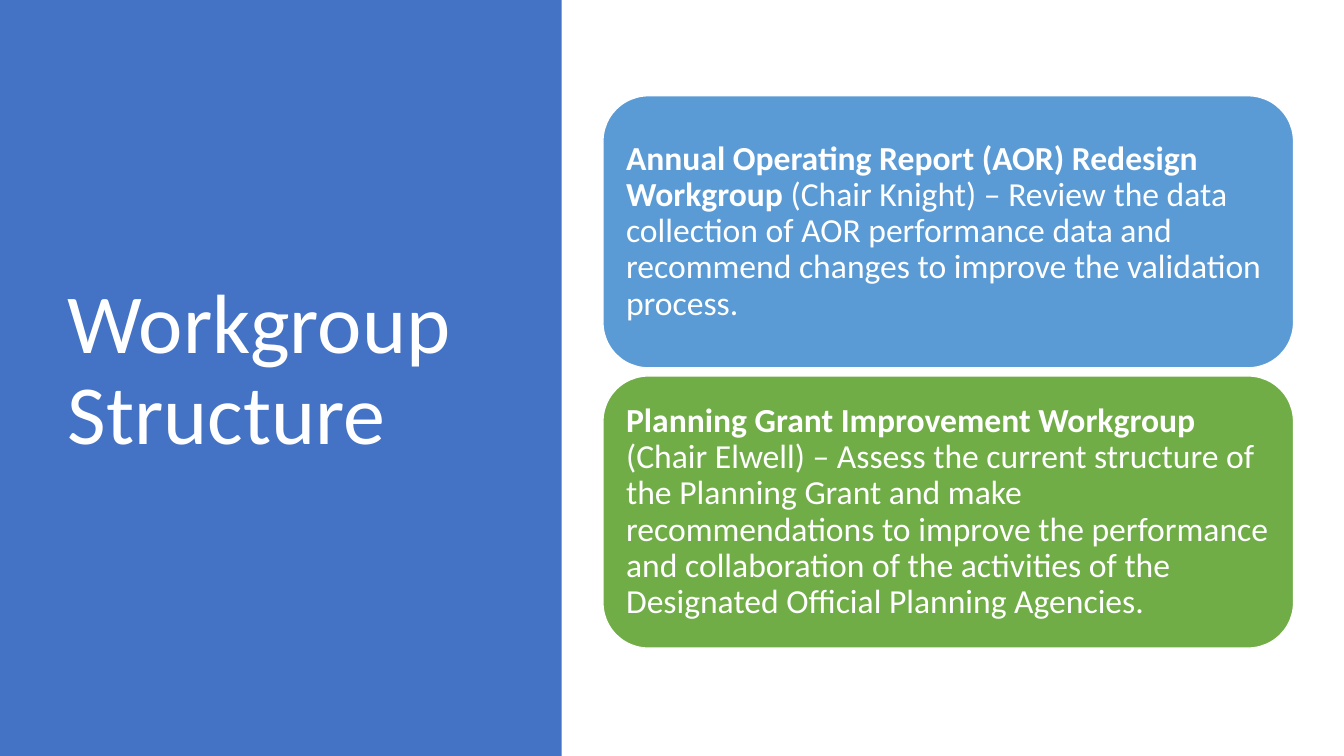
import pptx
import pptx.util
import pptx.dml.color
import pptx.enum.shapes
import pptx.enum.text

Inch = pptx.util.Inches
Color = pptx.dml.color.RGBColor
Kind = pptx.enum.shapes.MSO_SHAPE
Text = pptx.enum.text

WHITE = Color(0xFF, 0xFF, 0xFF)
NAVY = Color(0x44, 0x72, 0xC4)
BLUE = Color(0x5B, 0x9B, 0xD5)
GREEN = Color(0x70, 0xAD, 0x47)


def write(shape, runs, size=24, inset=0.1):
    """Fill a shape with one left-aligned paragraph of (text, bold) runs."""
    frame = shape.text_frame
    frame.word_wrap = True
    frame.auto_size = Text.MSO_AUTO_SIZE.NONE
    frame.vertical_anchor = Text.MSO_ANCHOR.MIDDLE
    frame.margin_left = frame.margin_right = Inch(inset)
    para = frame.paragraphs[0]
    para.alignment = Text.PP_ALIGN.LEFT
    para.line_spacing = 0.9
    for words, bold in runs:
        run = para.add_run()
        run.text = words
        font = run.font
        font.name = "Calibri"
        font.size = pptx.util.Pt(size)
        font.bold = bold
        font.color.rgb = WHITE


deck = pptx.Presentation()
deck.slide_width = Inch(13.33)
deck.slide_height = Inch(7.5)
slide = deck.slides.add_slide(deck.slide_layouts[5])
shapes = slide.shapes

# Title
title = shapes.title
title.left, title.top = Inch(0.57), Inch(0.68)
title.width, title.height = Inch(4.16), Inch(6.02)
write(title, [("Workgroup Structure", False)], size=60)

# Side panel, behind the title
panel = shapes.add_shape(Kind.RECTANGLE, 0, 0, Inch(5.57), deck.slide_height)
panel.shadow.inherit = False
panel.fill.solid()
panel.fill.fore_color.rgb = NAVY
panel.line.fill.background()
title.element.addprevious(panel.element)

# Workgroup cards, stacked at an equal pitch
left, top, width, height, pitch = 5.98, 0.95, 6.85, 2.7, 2.78
groups = [
    (BLUE, "Annual Operating Report (AOR) Redesign Workgroup",
     " (Chair Knight) – Review the data collection of AOR performance data "
     "and recommend changes to improve the validation process."),
    (GREEN, "Planning Grant Improvement Workgroup ",
     "(Chair Elwell) – Assess the current structure of the Planning Grant "
     "and make recommendations to improve the performance and collaboration "
     "of the activities of the Designated Official Planning Agencies."),
]
for row, (color, name, task) in enumerate(groups):
    card = shapes.add_shape(Kind.ROUNDED_RECTANGLE, Inch(left),
                            Inch(top + row * pitch), Inch(width), Inch(height))
    card.shadow.inherit = False
    card.fill.solid()
    card.fill.fore_color.rgb = color
    card.line.color.rgb = WHITE
    card.line.width = pptx.util.Pt(1)
    write(card, [(name, True), (task, False)])

deck.save("out.pptx")
